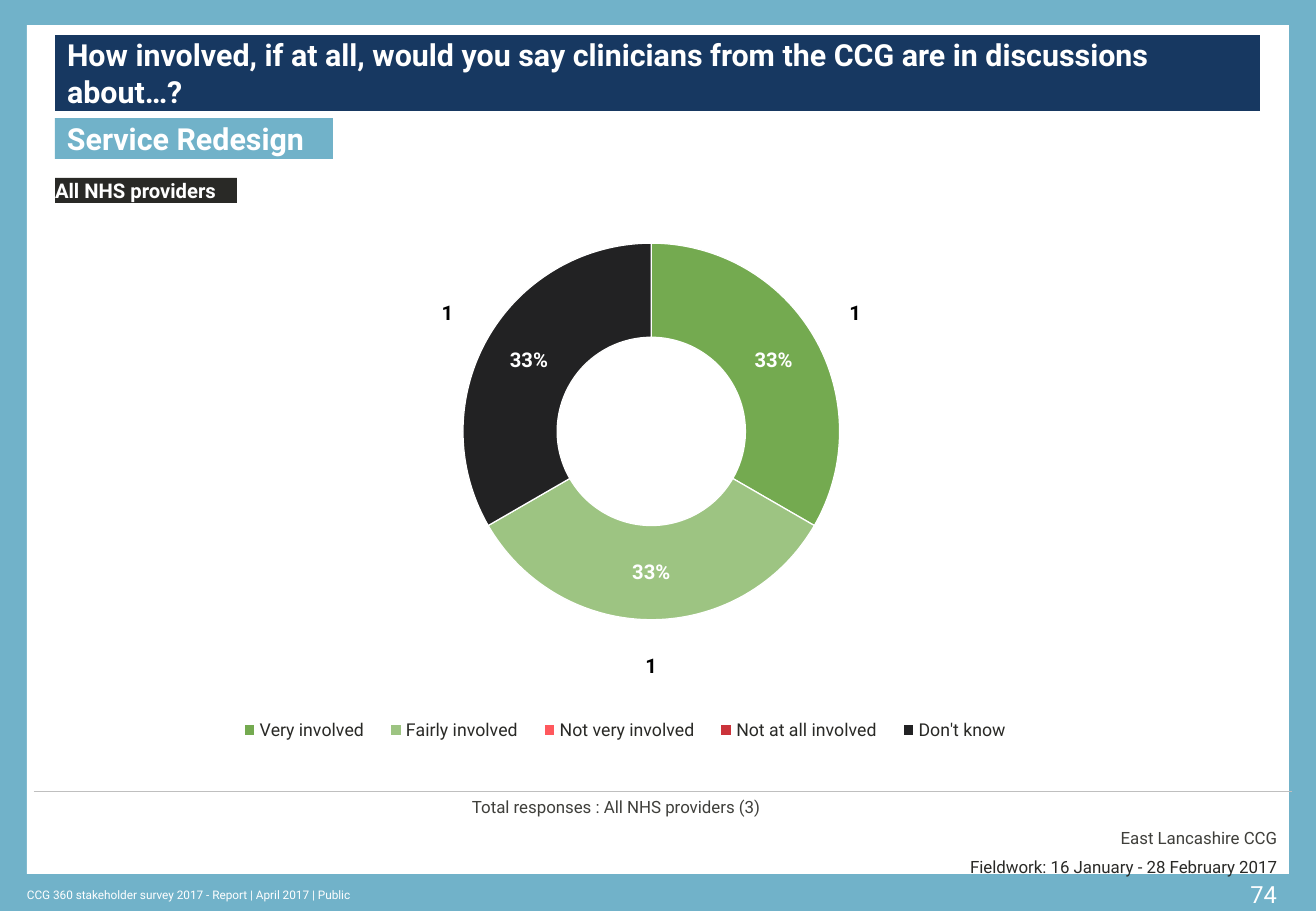
"""Build the survey slide with a doughnut of how involved clinicians are in service redesign."""
from lxml import etree
from pptx import Presentation
from pptx.chart.data import CategoryChartData
from pptx.dml.color import RGBColor
from pptx.enum.chart import XL_CHART_TYPE, XL_LEGEND_POSITION
from pptx.enum.shapes import MSO_CONNECTOR, MSO_SHAPE
from pptx.enum.text import MSO_ANCHOR, MSO_AUTO_SIZE, PP_ALIGN
from pptx.oxml import parse_xml
from pptx.oxml.ns import nsdecls, qn
from pptx.util import Pt

RECT = MSO_SHAPE.RECTANGLE
LEFT, RIGHT = PP_ALIGN.LEFT, PP_ALIGN.RIGHT
TOP, MIDDLE = MSO_ANCHOR.TOP, MSO_ANCHOR.MIDDLE
RING = XL_CHART_TYPE.DOUGHNUT
WHITE = RGBColor(0xFF, 0xFF, 0xFF)
BLACK = RGBColor(0x00, 0x00, 0x00)
SKY = RGBColor(0x71, 0xB2, 0xC9)
NAVY = RGBColor(0x17, 0x38, 0x61)
INK = RGBColor(0x29, 0x29, 0x26)
GREY = RGBColor(0x3F, 0x3F, 0x3B)
RULE = RGBColor(0xBF, 0xBF, 0xBF)
FONT = "Roboto"
PX = 914400 / 121.5
INSET = 12


def place(*box):
    """Turn px lengths into EMU."""
    return [round(n * PX) for n in box]


def write(shape, lines, size, color, bold=False, align=LEFT, anchor=TOP, inset=INSET, wrap=True):
    """Fill a shape with formatted paragraphs."""
    frame = shape.text_frame
    frame.text = "\n".join(lines)
    frame.word_wrap = wrap
    frame.auto_size = MSO_AUTO_SIZE.NONE
    frame.vertical_anchor = anchor
    frame.margin_left = frame.margin_right = round(inset * PX)
    frame.margin_top = frame.margin_bottom = round(inset / 2 * PX)
    for para in frame.paragraphs:
        para.alignment = align
        para.font.name = FONT
        para.font.size = Pt(size)
        para.font.bold = bold
        para.font.color.rgb = color


deck = Presentation()
deck.slide_width, deck.slide_height = place(1316, 911)
slide = deck.slides.add_slide(deck.slide_layouts[5])
shapes = slide.shapes
slide.background.fill.solid()
slide.background.fill.fore_color.rgb = SKY

title = shapes.title
title.left, title.top, title.width, title.height = place(55, 35, 1205, 76)
title.fill.solid()
title.fill.fore_color.rgb = NAVY
write(title, ["How involved, if at all, would you say clinicians from the CCG "
              "are in discussions about…?"], 18, WHITE, True, anchor=MIDDLE)

panels = []
for box, color in [
    ((27, 25, 1262, 849), WHITE),
    ((55, 118, 278, 41), SKY),
    ((55, 178, 182, 25), INK),
]:
    panel = shapes.add_shape(RECT, *place(*box))
    panel.shadow.inherit = False
    panel.fill.solid()
    panel.fill.fore_color.rgb = color
    panel.line.fill.background()
    panels.append(panel)
page, topic, group = panels
tree = page._element.getparent()
tree.insert(2, page._element)
write(topic, ["Service Redesign"], 18, WHITE, True, anchor=MIDDLE)
write(group, ["All NHS providers"], 12, WHITE, True, inset=0)

answers = [
    ("Very involved", "74AA50"),
    ("Fairly involved", "9DC482"),
    ("Not very involved", "FF585D"),
    ("Not at all involved", "CB333B"),
    ("Don't know", "222223"),
]
data = CategoryChartData()
data.categories = [name for name, tint in answers]
data.add_series("Series 1", (33, 33, 0, 0, 33))
data.add_series("Series 2", (1, 1, 0, 0, 1))
chart = shapes.add_chart(RING, *place(0, 149, 1316, 642), data).chart
chart.has_title = False
chart.font.name = "Arial"
chart.font.size = Pt(18)
chart.font.color.rgb = INK
plot = chart.plots[0]
plot.vary_by_categories = True
share, count = plot.series

for series, code, color in [(share, '0"%";;;', WHITE), (count, "0;;;", BLACK)]:
    series.format.line.color.rgb = WHITE
    series.format.line.width = Pt(0.75)
    labels = series.data_labels
    labels.show_value = True
    labels.show_percentage = False
    labels.number_format = code
    labels.number_format_is_linked = False
    labels.font.name = FONT
    labels.font.size = Pt(12)
    labels.font.bold = True
    labels.font.color.rgb = color

for i, (name, tint) in enumerate(answers):
    look = share.points[i].format
    look.fill.solid()
    look.fill.fore_color.rgb = RGBColor.from_string(tint)
    look.line.color.rgb = WHITE
    look.line.width = Pt(0.75)
    blank = count.points[i].format
    blank.fill.background()
    blank.line.fill.background()

chart.has_legend = True
legend = chart.legend
legend.position = XL_LEGEND_POSITION.BOTTOM
legend.include_in_layout = False
legend.font.name = FONT
legend.font.size = Pt(10.5)
legend.font.color.rgb = INK

space = chart._chartSpace
space.find(".//" + qn("c:holeSize")).set("val", "38")
area = space.find(".//" + qn("c:plotArea"))
for host, inner, spot in [
    (area, '<c:layoutTarget val="inner"/>', (0.28, 0, 0.43, 0.88)),
    (legend._element, "", (0.17, 0.88, 0.61, 0.05)),
]:
    for old in host.findall(qn("c:layout")):
        host.remove(old)
    modes = '<c:xMode val="edge"/><c:yMode val="edge"/>'
    sizes = "".join(f'<c:{key} val="{val}"/>' for key, val in zip("xywh", spot))
    layout = parse_xml(f"<c:layout {nsdecls('c')}><c:manualLayout>{inner}{modes}{sizes}"
                       "</c:manualLayout></c:layout>")
    host.insert(0 if host is area else 1, layout)

rule = shapes.add_connector(MSO_CONNECTOR.STRAIGHT, *place(34, 791, 1292, 791))
rule.line.color.rgb = RULE
rule.line.width = Pt(0.25)
etree.SubElement(rule._element.spPr, qn("a:effectLst"))

base = shapes.add_textbox(*place(460, 791, 829, 64))
write(base, ["Total responses : All NHS providers (3)", "East Lancashire CCG"], 10, GREY)
owner = base.text_frame.paragraphs[1]
owner.alignment = RIGHT
owner.space_before = Pt(6)

dates = shapes.add_textbox(*place(926, 857, 351, 20))
write(dates, ["Fieldwork: 16 January - 28 February 2017"], 10, INK, align=RIGHT, inset=0)

footer = shapes.add_textbox(*place(27, 883, 650, 24))
write(footer, ["CCG 360 stakeholder survey 2017 - Report | April 2017 | Public"], 7, WHITE,
      anchor=MIDDLE, inset=0)

number = shapes.add_textbox(*place(1236, 874, 53, 41))
write(number, ["74"], 14, WHITE, align=RIGHT, wrap=False)

deck.save("out.pptx")
